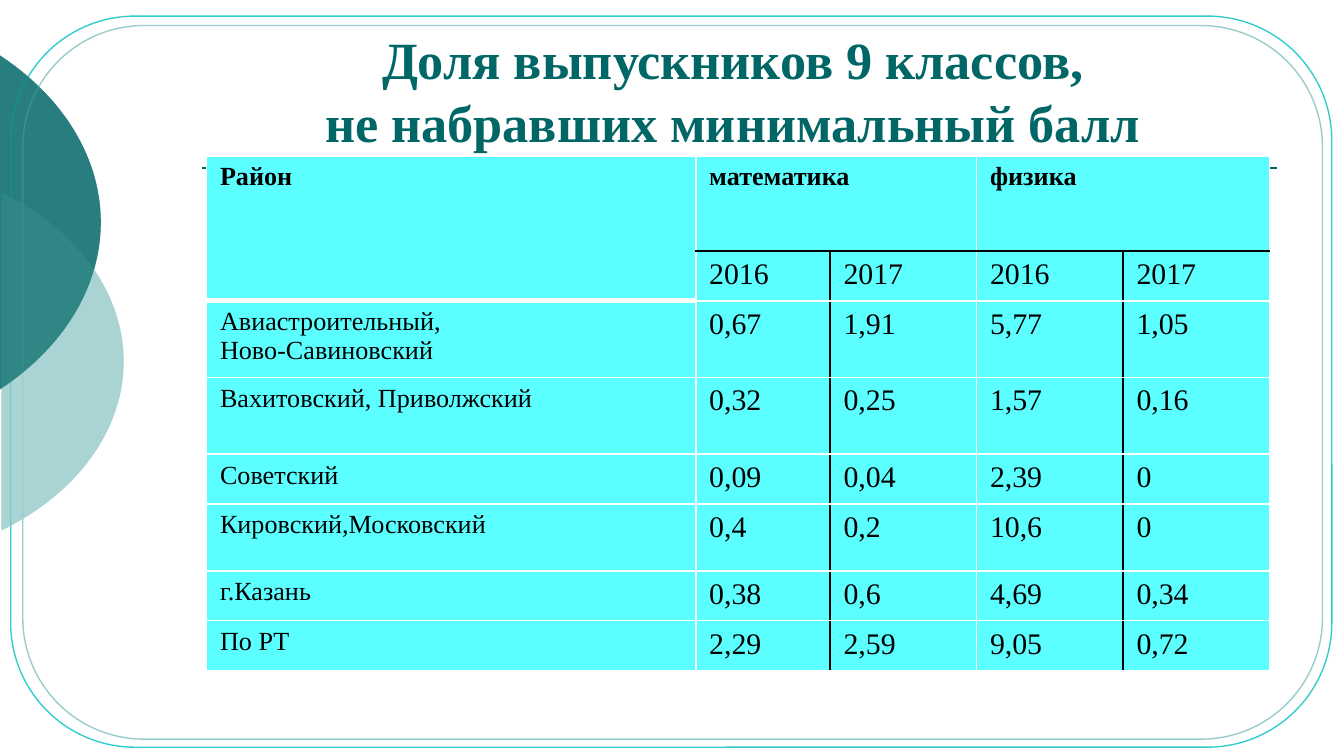
import math

from lxml import etree
from pptx import Presentation
from pptx import util as u
from pptx.dml.color import RGBColor
from pptx.enum import shapes, text
from pptx.oxml.ns import qn

COLUMNS, ROWS = 100, 56.25
TEAL, MIST, AQUA, CYAN = "006666", "99CCCC", "33CCCC", "5CFFFF"
WHITE, BLACK = "FFFFFF", "000000"

DISTRICTS = [
    ["Район", "математика", "", "физика", ""],
    ["", "2016", "2017", "2016", "2017"],
    ["Авиастроительный,\nНово-Савиновский", "0,67", "1,91", "5,77", "1,05"],
    ["Вахитовский, Приволжский", "0,32", "0,25", "1,57", "0,16"],
    ["Советский", "0,09", "0,04", "2,39", "0"],
    ["Кировский,Московский", "0,4", "0,2", "10,6", "0"],
    ["г.Казань", "0,38", "0,6", "4,69", "0,34"],
    ["По РТ", "2,29", "2,59", "9,05", "0,72"],
]
COLUMN_WIDTHS = [36.4, 10, 10.9, 10.9, 10.9]
ROW_HEIGHTS = [7.1, 3.7, 5.7, 5.7, 3.7, 5, 3.7, 3.7]
MERGES = [((0, 0), (1, 0)), ((0, 1), (0, 2)), ((0, 3), (0, 4))]


def color(value):
    return RGBColor.from_string(value)


class SlideBuilder:
    font = "Times New Roman"

    def __init__(self, presentation):
        self.slide = presentation.slides.add_slide(presentation.slide_layouts[6])
        self.unit = presentation.slide_width / COLUMNS

    def grid(self, *lengths):
        return [u.Emu(round(length * self.unit)) for length in lengths]

    def style(self, paragraph, size, value, bold):
        font = paragraph.font
        font.name, font.size, font.bold = self.font, u.Pt(size), bold
        font.color.rgb = color(value)

    def clipped_ellipse(self, left, top, width, height, edge, fill, opacity):
        builder = self.slide.shapes.build_freeform(*self.grid(left, top))
        builder.add_line_segments([self.grid(left + width, top + height)], close=True)
        shape = builder.convert_to_shape()
        shape.shadow.inherit = False
        shape.line.fill.background()
        shape.fill.solid()
        shape.fill.fore_color.rgb = color(fill)
        tint = shape.fill._xPr.find(qn("a:solidFill"))[0]
        etree.SubElement(tint, qn("a:alpha"), val=str(opacity * 1000))

        limit = math.acos((edge - left) * 2 / width - 1)
        cosine, sine = math.cos(limit), math.sin(limit)
        handle = 4 / 3 * math.tan(limit / 4)
        control = (cosine + handle * sine, sine - handle * cosine)
        segments = {
            "moveTo": [[(cosine, -sine)]],
            "cubicBezTo": [
                [(control[0], -control[1]), (1, -handle), (1, 0)],
                [(1, handle), control, (cosine, sine)],
            ],
            "close": [[]],
        }
        outline = next(shape._element.iter(qn("a:path")))
        for child in list(outline):
            outline.remove(child)
        for name, curves in segments.items():
            for points in curves:
                segment = etree.SubElement(outline, qn(f"a:{name}"))
                for x, y in points:
                    across, down = self.grid((1 + x) * width / 2, (1 + y) * height / 2)
                    etree.SubElement(segment, qn("a:pt"), x=str(across), y=str(down))

    def frame(self, left, top, width, height, line):
        shape = self.slide.shapes.add_shape(
            shapes.MSO_SHAPE.ROUNDED_RECTANGLE, *self.grid(left, top, width, height))
        shape.adjustments[0] = 0.17
        shape.shadow.inherit = False
        shape.fill.background()
        shape.line.color.rgb = color(line)
        shape.line.width = u.Pt(0.75)

    def rule(self, left, right, row, line):
        connector = self.slide.shapes.add_connector(
            shapes.MSO_CONNECTOR.STRAIGHT, *self.grid(left, row, right, row))
        connector.line.color.rgb = color(line)
        connector.line.width = u.Pt(1)
        etree.SubElement(connector._element.spPr, qn("a:effectLst"))

    def title(self, left, top, width, height, content):
        box = self.slide.shapes.add_textbox(*self.grid(left, top, width, height))
        frame = box.text_frame
        frame.word_wrap = True
        frame.vertical_anchor = text.MSO_ANCHOR.BOTTOM
        frame.text = content
        paragraph = frame.paragraphs[0]
        paragraph.alignment = text.PP_ALIGN.CENTER
        self.style(paragraph, 28, TEAL, True)

    def border(self, cell, side, value, width):
        line = etree.SubElement(cell._tc.get_or_add_tcPr(), qn(f"a:ln{side}"), w=str(u.Pt(width)))
        fill = etree.SubElement(line, qn("a:solidFill"))
        etree.SubElement(fill, qn("a:srgbClr"), val=value)

    def cell(self, cell, row, column, content):
        black_sides = {
            "L": row > 0 and column in (2, 4),
            "R": row > 0 and column in (1, 3),
            "T": row == 1 and column > 0,
            "B": row == 0 and column > 0,
        }
        for side, black in black_sides.items():
            thick = side == "B" and column == 0 and row < 2
            self.border(cell, side, BLACK if black else WHITE, 3 if thick else 1)
        cell.fill.solid()
        cell.fill.fore_color.rgb = color(CYAN)
        cell.text = content
        size = 14 if row == 0 or column == 0 else 16
        for paragraph in cell.text_frame.paragraphs:
            self.style(paragraph, size, BLACK, row == 0)

    def table(self, left, top, widths, heights, rows, merges):
        table = self.slide.shapes.add_table(
            len(rows), len(widths), *self.grid(left, top, sum(widths), sum(heights))).table
        table.first_row = table.horz_banding = False
        for column, width in zip(table.columns, self.grid(*widths)):
            column.width = width
        for row, height in zip(table.rows, self.grid(*heights)):
            row.height = height
        for row, values in enumerate(rows):
            for column, value in enumerate(values):
                self.cell(table.cell(row, column), row, column, value)
        for start, end in merges:
            table.cell(*start).merge(table.cell(*end))


def main():
    presentation = Presentation()
    presentation.slide_width = u.Inches(10)
    presentation.slide_height = u.Emu(round(presentation.slide_width * ROWS / COLUMNS))
    builder = SlideBuilder(presentation)

    def ellipses():
        builder.clipped_ellipse(-30.8, 11.9, 40, 30, 0.1, MIST, 58)
        builder.clipped_ellipse(-36.7, 0, 44.2, 33.1, -0.1, TEAL, 60)

    ellipses()
    builder.frame(0.8, 1.2, 98.3, 54.4, AQUA)
    builder.frame(1.7, 1.9, 96.7, 53.1, MIST)
    builder.rule(15, 95, 12.5, TEAL)
    ellipses()
    builder.title(15, 2.45, 80, 9.4, "Доля выпускников 9 классов, \vне набравших минимальный балл ")
    builder.table(15.37, 11.6, COLUMN_WIDTHS, ROW_HEIGHTS, DISTRICTS, MERGES)
    presentation.save("out.pptx")


if __name__ == "__main__":
    main()
